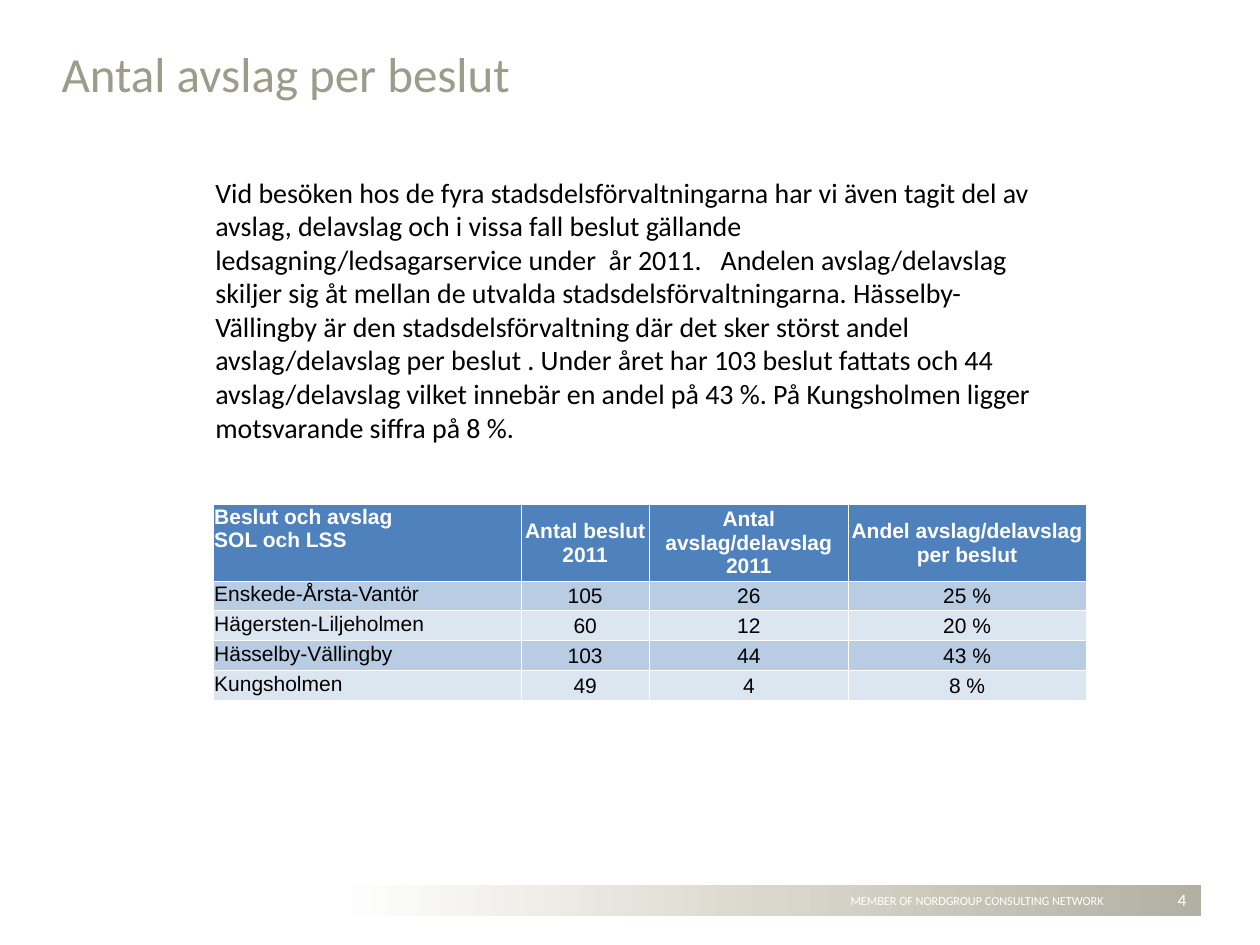
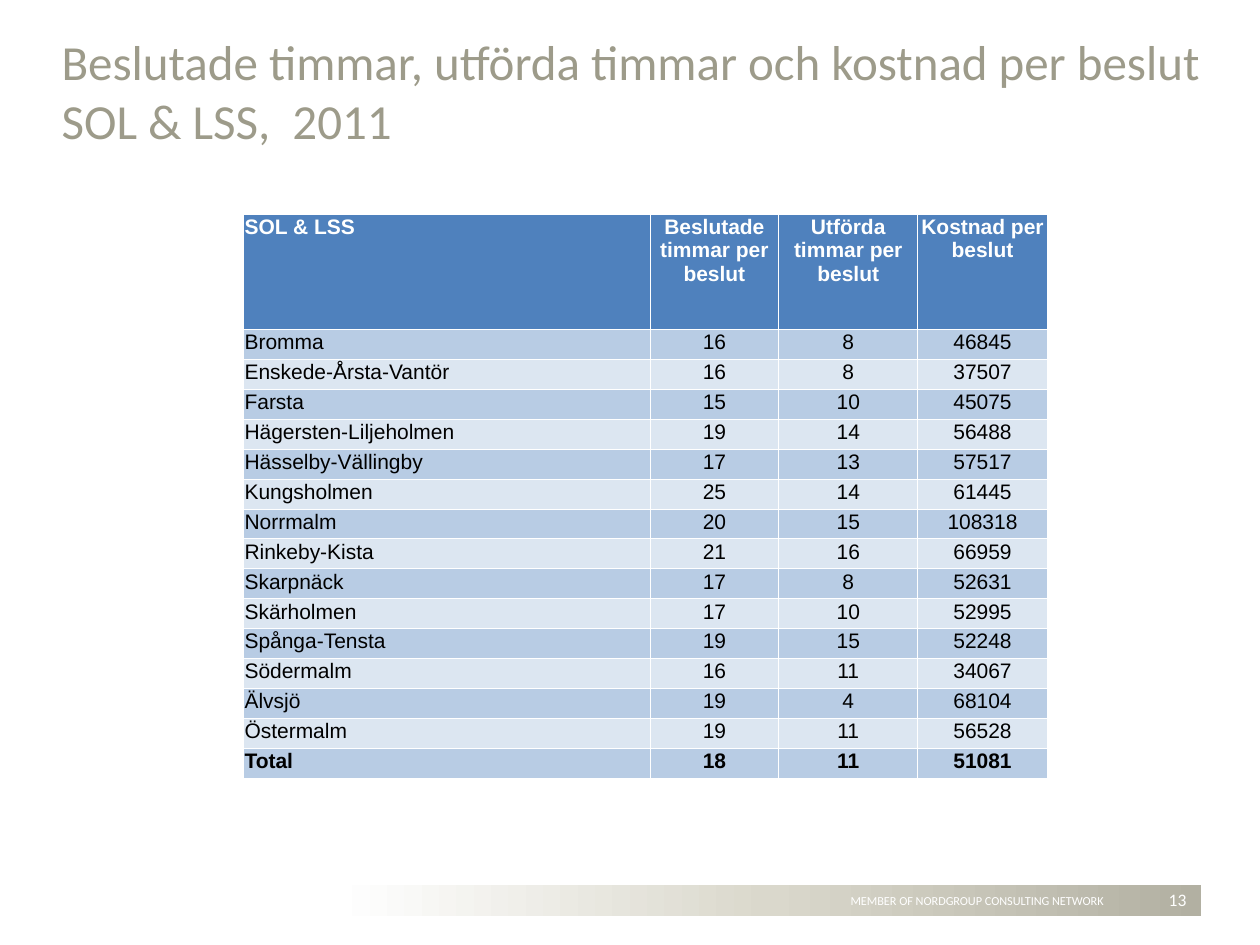
from copy import deepcopy

from lxml.etree import SubElement
from pptx import Presentation
from pptx.dml.color import RGBColor
from pptx.enum.shapes import MSO_SHAPE as Preset
from pptx.enum.text import MSO_ANCHOR as Anchor, MSO_AUTO_SIZE as AutoSize, PP_ALIGN as Align
from pptx.oxml.ns import qn
from pptx.util import Pt

WHITE, BLACK = "FFFFFF", "000000"
TITLE_COLOUR = "9D9B8A"
BAND_STOPS = [(0, "B2B0A2"), (0.5, "DAD8CC"), (1, WHITE)]
HEADER_FILL = "4F81BD"
ROW_FILLS = ["B8CCE4", "DCE6F1"]
BODY_FONT, TABLE_FONT = "Calibri", "Arial"
ROW_HEIGHT = 17.1
CELL_INSET = 0.75

REFUSALS_TEXT = (
    "Vid besöken hos de fyra stadsdelsförvaltningarna har vi även tagit del av "
    "avslag, delavslag och i vissa fall beslut gällande ledsagning/ledsagarservice "
    "under  år 2011.   Andelen avslag/delavslag skiljer sig åt mellan de utvalda "
    "stadsdelsförvaltningarna. Hässelby-Vällingby är den stadsdelsförvaltning där "
    "det sker störst andel avslag/delavslag per beslut . Under året har 103 beslut "
    "fattats och 44 avslag/delavslag vilket innebär en andel på 43 %. På Kungsholmen "
    "ligger motsvarande siffra på 8 %."
)
REFUSALS = [
    ("Beslut och avslag\nSOL och LSS", "Antal beslut 2011",
     "Antal avslag/delavslag 2011", "Andel avslag/delavslag per beslut"),
    ("Enskede-Årsta-Vantör", 105, 26, "25 %"),
    ("Hägersten-Liljeholmen", 60, 12, "20 %"),
    ("Hässelby-Vällingby", 103, 44, "43 %"),
    ("Kungsholmen", 49, 4, "8 %"),
]
HOURS = [
    ("SOL & LSS", "Beslutade timmar per beslut",
     "Utförda timmar per beslut", "Kostnad per beslut"),
    ("Bromma", 16, 8, 46845),
    ("Enskede-Årsta-Vantör", 16, 8, 37507),
    ("Farsta", 15, 10, 45075),
    ("Hägersten-Liljeholmen", 19, 14, 56488),
    ("Hässelby-Vällingby", 17, 13, 57517),
    ("Kungsholmen", 25, 14, 61445),
    ("Norrmalm", 20, 15, 108318),
    ("Rinkeby-Kista", 21, 16, 66959),
    ("Skarpnäck", 17, 8, 52631),
    ("Skärholmen", 17, 10, 52995),
    ("Spånga-Tensta", 19, 15, 52248),
    ("Södermalm", 16, 11, 34067),
    ("Älvsjö", 19, 4, 68104),
    ("Östermalm", 19, 11, 56528),
    ("Total", 18, 11, 51081),
]


def rgb(colour):
    """Turn a hex string into a colour."""
    return RGBColor.from_string(colour)


def points(box):
    """Turn left, top, width and height in points into lengths."""
    return [Pt(value) for value in box]


def write(frame, text, size, colour, font=BODY_FONT, align=Align.LEFT, bold=False):
    """Fill a text frame and format all its runs alike."""
    frame.text = text
    frame.word_wrap = True
    for paragraph in frame.paragraphs:
        paragraph.alignment = align
        for run in paragraph.runs:
            run.font.name = font
            run.font.size = Pt(size)
            run.font.bold = bold
            run.font.color.rgb = rgb(colour)


def add_text(slide, box, text, size, colour, align=Align.LEFT, anchor=Anchor.TOP):
    """Add a text box."""
    frame = slide.shapes.add_textbox(*points(box)).text_frame
    write(frame, text, size, colour, align=align)
    frame.vertical_anchor = anchor


def add_footer(slide, box, number):
    """Draw the fading band with the membership line and the page number."""
    left, top, width, height = box
    band = slide.shapes.add_shape(Preset.RECTANGLE, *points(box))
    band.shadow.inherit = False
    band.line.fill.background()
    band.fill.gradient()
    stop_list = band._element.xpath(".//a:gsLst")[0]
    stop_list.append(deepcopy(stop_list[-1]))
    for stop, (position, colour) in zip(band.fill.gradient_stops, BAND_STOPS):
        stop.position = position
        stop.color.rgb = rgb(colour)
    band.fill.gradient_angle = 180
    add_text(slide, (left + 287.5, top + 1.5, 188, 16),
             "MEMBER OF NORDGROUP CONSULTING NETWORK", 7, WHITE)
    add_text(slide, (left + width - 34.5, top - 0.5, 33, height), str(number), 10, WHITE,
             Align.RIGHT, Anchor.MIDDLE)


def add_page(deck, title, title_box, number):
    """Add a slide with its title and footer."""
    slide = deck.slides.add_slide(deck.slide_layouts[5])
    heading = slide.shapes.title
    heading.left, heading.top, heading.width, heading.height = points(title_box)
    write(heading.text_frame, title, 28, TITLE_COLOUR)
    heading.text_frame.auto_size = AutoSize.NONE
    heading.text_frame.vertical_anchor = Anchor.BOTTOM
    add_footer(slide, (191.5, 505.5, 495, 18), number)
    return slide


def add_borders(cell):
    """Rule all four sides of a cell in white."""
    properties = cell._tc.get_or_add_tcPr()
    for side in ("a:lnL", "a:lnR", "a:lnT", "a:lnB"):
        line = SubElement(properties, qn(side), w=str(Pt(0.5)))
        SubElement(SubElement(line, qn("a:solidFill")), qn("a:srgbClr"), val=WHITE)


def add_district_table(slide, origin, widths, header_height, rows, value_anchor):
    """Add a banded table with a header row and one row per district."""
    heights = [header_height] + [ROW_HEIGHT] * (len(rows) - 1)
    box = (*origin, sum(widths), sum(heights))
    table = slide.shapes.add_table(len(rows), len(widths), *points(box)).table
    table.horz_banding = False
    for column, width in zip(table.columns, widths):
        column.width = Pt(width)
    for row_index, (row, height) in enumerate(zip(rows, heights)):
        table.rows[row_index].height = Pt(height)
        is_header = row_index == 0
        for column_index, value in enumerate(row):
            is_label = column_index == 0
            cell = table.cell(row_index, column_index)
            cell.margin_left = cell.margin_right = cell.margin_top = Pt(CELL_INSET)
            cell.margin_bottom = Pt(0)
            cell.vertical_anchor = Anchor.TOP if is_label else value_anchor
            write(cell.text_frame, str(value), 12, WHITE if is_header else BLACK, TABLE_FONT,
                  Align.LEFT if is_label else Align.CENTER, is_header or row[0] == "Total")
            add_borders(cell)
            cell.fill.solid()
            cell.fill.fore_color.rgb = rgb(HEADER_FILL if is_header else ROW_FILLS[(row_index - 1) % 2])


def add_refusals_page(deck):
    """Add the slide on refusals per decision."""
    slide = add_page(deck, "Antal avslag per beslut", (28, 5, 597, 57), 4)
    add_district_table(slide, (121.7, 288), (176, 73.5, 113.5, 136), 41.5, REFUSALS, Anchor.MIDDLE)
    add_text(slide, (116, 96.5, 493, 143), REFUSALS_TEXT, 16, BLACK)


def add_hours_page(deck):
    """Add the slide on hours and cost per decision."""
    title = "Beslutade timmar, utförda timmar och kostnad per beslut\vSOL & LSS,  2011"
    slide = add_page(deck, title, (28, 31.7, 677.5, 57), 13)
    add_district_table(slide, (139, 122.3), (232.5, 73.5, 79.5, 74), 66, HOURS, Anchor.TOP)


def main():
    """Build and save the deck."""
    deck = Presentation()
    deck.slide_width, deck.slide_height = Pt(720), Pt(540)
    add_refusals_page(deck)
    add_hours_page(deck)
    deck.save("out.pptx")


if __name__ == "__main__":
    main()
